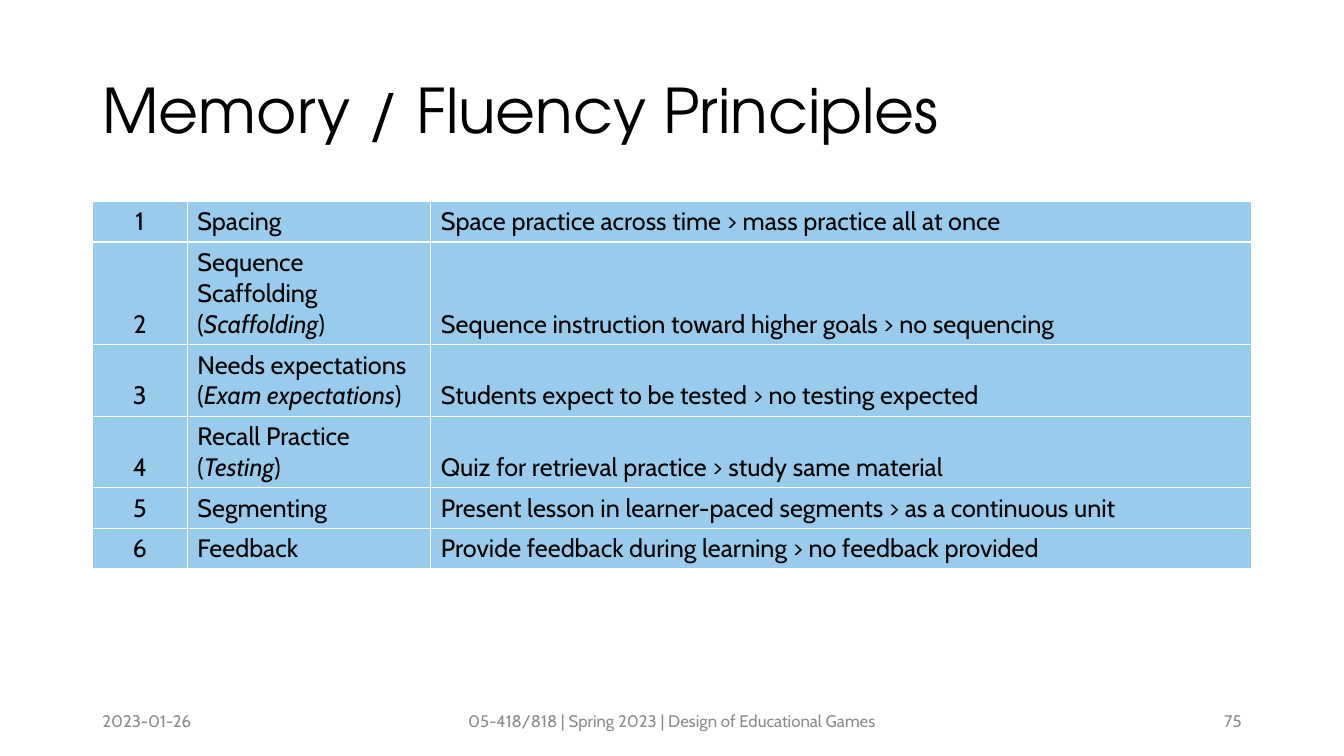
from lxml.etree import SubElement as Sub
from pptx import Presentation
from pptx.dml.color import RGBColor as RGB
from pptx.enum.text import MSO_ANCHOR as Anchor, PP_ALIGN as Align
from pptx.oxml.ns import qn
from pptx.util import Inches, Pt

ROWS = [
    ("Spacing", "", 1,
     "Space practice across time > mass practice all at once"),
    ("Sequence Scaffolding", "Scaffolding", 3,
     "Sequence instruction toward higher goals > no sequencing"),
    ("Needs expectations", "Exam expectations", 2,
     "Students expect to be tested > no testing expected"),
    ("Recall Practice", "Testing", 2,
     "Quiz for retrieval practice > study same material"),
    ("Segmenting", "", 1,
     "Present lesson in learner-paced segments > as a continuous unit"),
    ("Feedback", "", 1,
     "Provide feedback during learning > no feedback provided"),
]


def color(code):
    return RGB.from_string(code)


def write(frame, *parts, font="Cabin", size=18, ink="000000",
          align=Align.LEFT, lead=None):
    """Fill the first paragraph; every second part is italic."""
    para = frame.paragraphs[0]
    para.alignment = align
    if lead:
        para.line_spacing = lead
    for i, part in enumerate(parts):
        run = para.add_run()
        run.text = part
        run.font.name = font
        run.font.size = Pt(size)
        run.font.italic = i % 2 == 1
        run.font.color.rgb = color(ink)


class Deck:
    """Places elements on a grid of 160 columns by 150 rows."""
    wide, high = 13.33, 7.5
    left, span = 11, 138
    fill, line, gray = "99CBED", "FFFFFF", "8C8C8C"

    def __init__(self):
        self.file = Presentation()
        self.file.slide_width = Inches(self.wide)
        self.file.slide_height = Inches(self.high)
        self.slide = self.file.slides.add_slide(self.file.slide_layouts[6])

    def col(self, n):
        return Inches(self.wide * n / 160)

    def row(self, n):
        return Inches(self.high * n / 150)

    def text(self, x, y, w, h, words, **form):
        box = self.slide.shapes.add_textbox(
            self.col(x), self.row(y), self.col(w), self.row(h))
        frame = box.text_frame
        frame.word_wrap = True
        frame.vertical_anchor = Anchor.MIDDLE
        write(frame, words, **form)

    def title(self, words):
        self.text(self.left, 8, self.span, 29, words,
                  font="TeX Gyre Adventor", size=44, lead=0.9)

    def foot(self, x, w, words, align):
        self.text(x, 139, w, 8, words, size=12, ink=self.gray, align=align)

    def cell(self, cell, *parts, align=Align.LEFT):
        write(cell.text_frame, *parts, align=align)
        cell.vertical_anchor = Anchor.BOTTOM
        props = cell._tc.get_or_add_tcPr()
        for side in "LRTB":
            edge = Sub(props, qn(f"a:ln{side}"), w=str(Pt(1)))
            Sub(Sub(edge, qn("a:solidFill")), qn("a:srgbClr"), val=self.line)
        cell.fill.solid()
        cell.fill.fore_color.rgb = color(self.fill)

    def table(self, y, rows, widths):
        highs = [8 + 6.2 * (lines - 1) for _, _, lines, _ in rows]
        grid = self.slide.shapes.add_table(
            len(rows), len(widths), self.col(self.left), self.row(y),
            self.col(self.span), self.row(sum(highs))).table
        grid.first_row = grid.horz_banding = False
        for col, w in zip(grid.columns, widths):
            col.width = self.col(w)
        for i, (name, alias, _, claim) in enumerate(rows):
            grid.rows[i].height = self.row(highs[i])
            label = (f"{name} (", alias, ")") if alias else (name,)
            self.cell(grid.cell(i, 0), str(i + 1), align=Align.CENTER)
            self.cell(grid.cell(i, 1), *label)
            self.cell(grid.cell(i, 2), claim)


def main():
    deck = Deck()
    deck.title("Memory / Fluency Principles")
    deck.table(40, ROWS, (11.3, 29, 97.7))
    deck.foot(11, 36, "2023-01-26", Align.LEFT)
    deck.foot(53, 54, "05-418/818 | Spring 2023 | Design of Educational Games",
              Align.CENTER)
    deck.foot(113, 36, "75", Align.RIGHT)
    deck.file.save("out.pptx")


if __name__ == "__main__":
    main()
